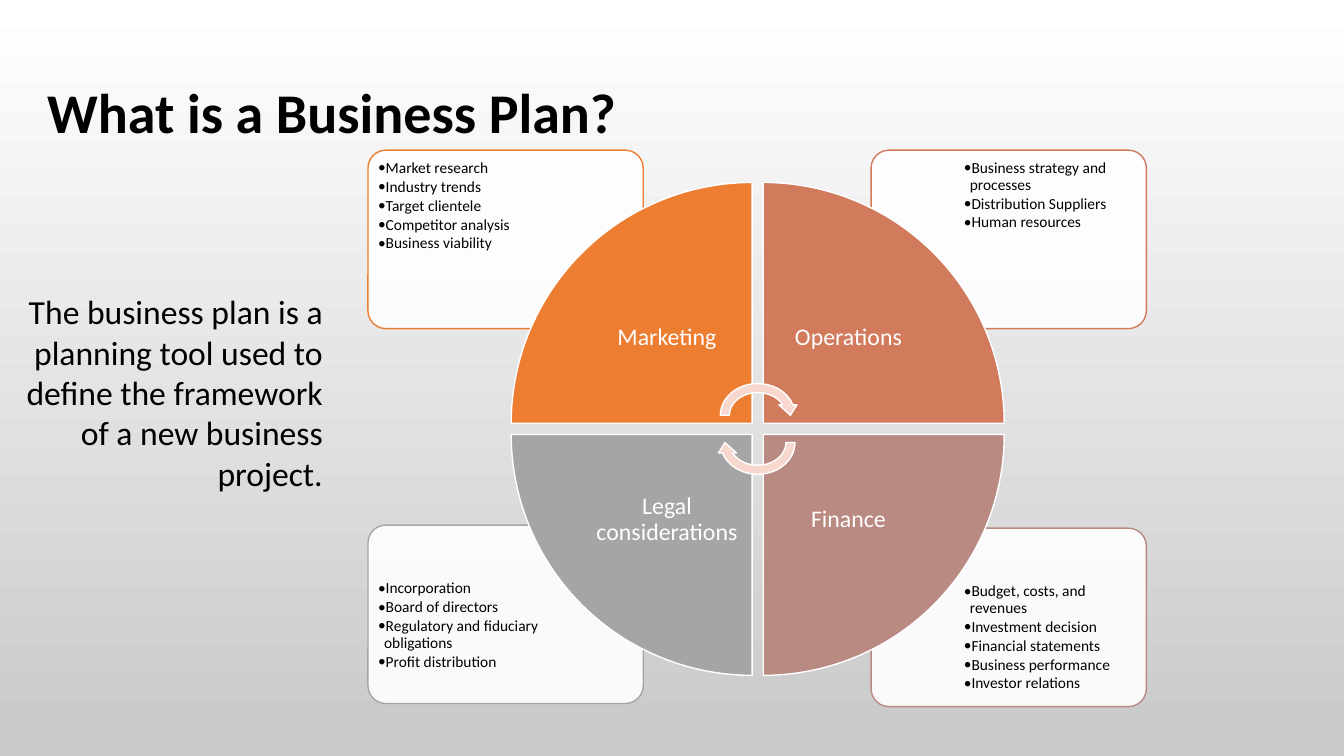
from dataclasses import dataclass

from lxml import etree
from pptx import Presentation
from pptx.dml.color import RGBColor
from pptx.enum.shapes import MSO_SHAPE
from pptx.enum.text import MSO_ANCHOR, PP_ALIGN
from pptx.oxml.ns import qn
from pptx.util import Inches, Pt

ROUNDED, WEDGE, ARROW = MSO_SHAPE.ROUNDED_RECTANGLE, MSO_SHAPE.PIE_WEDGE, MSO_SHAPE.CIRCULAR_ARROW
LEFT, CENTER, RIGHT = PP_ALIGN.LEFT, PP_ALIGN.CENTER, PP_ALIGN.RIGHT
TOP, MIDDLE = MSO_ANCHOR.TOP, MSO_ANCHOR.MIDDLE
FONT = "Calibri"
COLORS = {
    "black": "000000", "white": "FFFFFF", "shade": "C9C9C9", "arrow": "F8D7CE",
    "marketing": "ED7D31", "operations": "D17B5C", "finance": "B98A82", "legal": "A5A5A5",
}
CARD_SIZE = (2.73, 1.77)
LIST_SIZE = (1.83, 1.25)
WHEEL = (5.07, 1.81)
WEDGE_SIZE, WEDGE_PITCH, LABEL_SIZE = 2.39, 2.5, 1.69
ARROW_SIZE = (0.83, 0.72)


@dataclass
class Quadrant:
    """A quarter of the wheel with its label and its card of topics."""
    column: int
    row: int
    rotation: int
    color: str
    label: str
    card: tuple
    topics: list


QUADRANTS = [
    Quadrant(1, 1, 180, "finance", "Finance", (8.64, 5.24),
             ["Budget, costs, and revenues", "Investment decision", "Financial statements",
              "Business performance", "Investor relations"]),
    Quadrant(0, 1, 270, "legal", "Legal considerations", (3.65, 5.21),
             ["Incorporation", "Board of directors", "Regulatory and fiduciary obligations",
              "Profit distribution"]),
    Quadrant(1, 0, 90, "operations", "Operations", (8.64, 1.49),
             ["Business strategy and processes", "Distribution Suppliers", "Human resources"]),
    Quadrant(0, 0, 0, "marketing", "Marketing", (3.65, 1.49),
             ["Market research", "Industry trends", "Target clientele", "Competitor analysis",
              "Business viability"]),
]


def rgb(name):
    """Return the named colour."""
    return RGBColor.from_string(COLORS[name])


def add_text(slide, box, lines, size, color="black", align=LEFT, anchor=TOP, inset=None, spacing=1.0):
    """Add a wrapped text box with one paragraph per line."""
    frame = slide.shapes.add_textbox(*map(Inches, box)).text_frame
    frame.word_wrap = True
    frame.vertical_anchor = anchor
    if inset is not None:
        frame.margin_left = frame.margin_right = Inches(inset)
        frame.margin_top = frame.margin_bottom = Inches(inset)
    frame.text = "\n".join(lines)
    for para in frame.paragraphs:
        para.alignment = align
        para.line_spacing = spacing
        for span in para.runs:
            span.font.name = FONT
            span.font.size = Pt(size)
            span.font.color.rgb = rgb(color)
    return frame


def add_figure(slide, kind, box, fill, line, rotation=0):
    """Add a filled and outlined preset shape."""
    figure = slide.shapes.add_shape(kind, *map(Inches, box))
    figure.shadow.inherit = False
    figure.fill.solid()
    figure.fill.fore_color.rgb = rgb(fill)
    figure.line.color.rgb = rgb(line)
    figure.line.width = Pt(1)
    figure.rotation = rotation
    return figure


def add_bullet(para):
    """Give a paragraph a hanging bullet and a little space after it."""
    para.level = 1
    para.space_after = Pt(1.6)
    properties = para._p.get_or_add_pPr()
    properties.set("marL", str(Inches(0.06)))
    properties.set("indent", str(Inches(-0.06)))
    etree.SubElement(properties, qn("a:buFont")).set("typeface", FONT)
    etree.SubElement(properties, qn("a:buChar")).set("char", "•")


def add_card(slide, quadrant):
    """Add the translucent card and its topics, kept clear of the wheel."""
    left, top = quadrant.card
    card = add_figure(slide, ROUNDED, (left, top, *CARD_SIZE), "white", quadrant.color)
    card.adjustments[0] = 0.1
    color = card._element.spPr.find(qn("a:solidFill"))[0]
    etree.SubElement(color, qn("a:alpha")).set("val", "90000")
    list_left = left + (0.04, 0.86)[quadrant.column]
    list_top = top + (0.04, 0.49)[quadrant.row]
    frame = add_text(slide, (list_left, list_top, *LIST_SIZE), quadrant.topics, 11,
                     inset=0.06, spacing=0.9)
    for para in frame.paragraphs:
        add_bullet(para)


def add_wedge(slide, quadrant):
    """Add a quarter of the wheel with its label towards the centre."""
    left = WHEEL[0] + quadrant.column * WEDGE_PITCH
    top = WHEEL[1] + quadrant.row * WEDGE_PITCH
    add_figure(slide, WEDGE, (left, top, WEDGE_SIZE, WEDGE_SIZE), quadrant.color, "white",
               quadrant.rotation)
    slack = WEDGE_SIZE - LABEL_SIZE
    label_left = left + slack * (1 - quadrant.column)
    label_top = top + slack * (1 - quadrant.row)
    add_text(slide, (label_left, label_top, LABEL_SIZE, LABEL_SIZE), [quadrant.label], 17,
             "white", CENTER, MIDDLE, 0.13, 0.9)


def add_cycle(slide, left, top, gap):
    """Add the two arrows that turn around the hub."""
    for index in range(2):
        add_figure(slide, ARROW, (left, top + index * gap, *ARROW_SIZE), "arrow", "white",
                   180 * index)


def paint_background(slide):
    """Fill the background from white down to grey."""
    fill = slide.background.fill
    fill.gradient()
    fill.gradient_angle = 270
    for stop, name in zip(fill.gradient_stops, ("white", "shade")):
        stop.color.rgb = rgb(name)


def build_slide(deck):
    """Build the business plan slide."""
    slide = deck.slides.add_slide(deck.slide_layouts[6])
    paint_background(slide)
    title = add_text(slide, (0.37, 0.72, 9.18, 0.77), ["What is a Business Plan?"], 40)
    title.paragraphs[0].runs[0].font.bold = True
    add_text(slide, (0, 2.84, 3.3, 2.12),
             ["The business plan is a planning tool used to define the framework "
              "of a new business project."], 24, align=RIGHT)
    for quadrant in QUADRANTS:
        add_card(slide, quadrant)
    for quadrant in QUADRANTS:
        add_wedge(slide, quadrant)
    add_cycle(slide, 7.1, 3.76, 0.27)


def main():
    """Create and save the deck."""
    deck = Presentation()
    deck.slide_width, deck.slide_height = Inches(13.33), Inches(7.5)
    build_slide(deck)
    deck.save("out.pptx")


if __name__ == "__main__":
    main()
